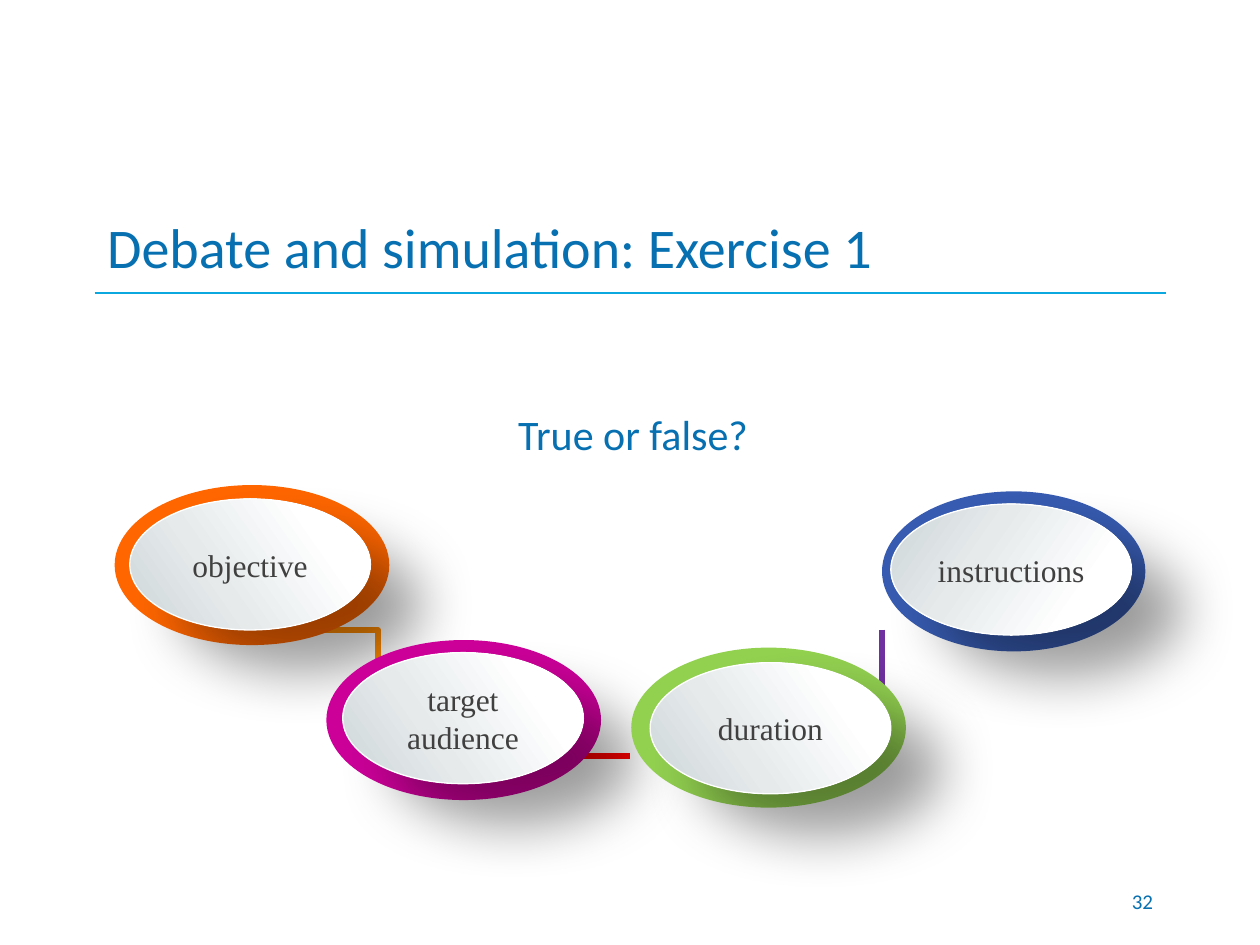
from dataclasses import dataclass
from lxml import etree
from pptx import Presentation
from pptx.dml.color import RGBColor
from pptx.enum.shapes import MSO_CONNECTOR as CONNECTOR, MSO_SHAPE as SHAPE
from pptx.enum.text import MSO_ANCHOR as ANCHOR, PP_ALIGN as ALIGN
from pptx.oxml import parse_xml
from pptx.oxml.ns import nsdecls, qn
from pptx.util import Inches, Pt

WIDTH, HEIGHT = 10, 7.5
MARGIN = 0.075 * WIDTH
CONTENT = WIDTH - 2 * MARGIN
BLUE = RGBColor(0x07, 0x70, 0xB1)
RULE = RGBColor(0x0B, 0xA7, 0xDF)
WHITE = RGBColor(0xFF, 0xFF, 0xFF)
GREY = RGBColor(0x40, 0x40, 0x40)
PURPLE = RGBColor(0x70, 0x30, 0xA0)
RED = RGBColor(0xFF, 0x00, 0x00)
AMBER = RGBColor(0xFF, 0x8A, 0x00)
INDIGO = RGBColor(0x37, 0x5B, 0xB0)
ORANGE = RGBColor(0xFF, 0x66, 0x00)
MAGENTA = RGBColor(0xCC, 0x00, 0x99)
GREEN = RGBColor(0x92, 0xD0, 0x50)
GLOSS = ((0, "CDD5D8"), (37, "E6EAEB"), (77, "FFFFFF"), (100, "FFFFFF"))
FACE_SIZE = (1.91, 1.04)


@dataclass
class Box:
    left: float
    top: float
    width: float
    height: float

    def emu(self):
        return [Inches(v) for v in (self.left, self.top, self.width, self.height)]


def write(shape, text, font, size, color, align, anchor=ANCHOR.MIDDLE):
    frame = shape.text_frame
    frame.word_wrap = True
    frame.vertical_anchor = anchor
    paragraph = frame.paragraphs[0]
    paragraph.alignment = align
    run = paragraph.add_run()
    run.text = text
    run.font.name = font
    run.font.size = Pt(size)
    run.font.color.rgb = color
    return paragraph


def add_header(slide, box, text):
    title = slide.shapes.title
    title.left, title.top, title.width, title.height = box.emu()
    write(title, text, "Calibri", 32, BLUE, ALIGN.LEFT)
    bottom = Inches(box.top + box.height)
    rule = slide.shapes.add_connector(
        CONNECTOR.STRAIGHT, Inches(box.left), bottom, Inches(box.left + box.width), bottom)
    rule.line.color.rgb = RULE
    rule.line.width = Pt(0.75)
    etree.SubElement(rule._element.spPr, qn("a:effectLst"))


def add_label(slide, box, text, size, align, anchor):
    label = slide.shapes.add_textbox(*box.emu())
    return write(label, text, "Calibri", size, BLUE, align, anchor)


def bezier(points, t):
    while len(points) > 1:
        points = [(a[0] + (b[0] - a[0]) * t, a[1] + (b[1] - a[1]) * t)
                  for a, b in zip(points, points[1:])]
    return points[0]


def add_arc(slide, controls, color, steps=12):
    points = [bezier(controls, i / steps) for i in range(steps + 1)]
    builder = slide.shapes.build_freeform(*points[0], scale=Inches(1))
    builder.add_line_segments(points[1:], close=False)
    arc = builder.convert_to_shape()
    arc.shadow.inherit = False
    arc.fill.background()
    arc.line.color.rgb = color
    arc.line.width = Pt(3)


def add_gloss(shape, angle):
    properties = shape._element.spPr
    stops = "".join(f'<a:gs pos="{pos * 1000}"><a:srgbClr val="{color}"/></a:gs>'
                    for pos, color in GLOSS)
    properties.find(qn("a:prstGeom")).addnext(parse_xml(
        f'<a:gradFill {nsdecls("a")} rotWithShape="1"><a:gsLst>{stops}</a:gsLst>'
        f'<a:lin ang="{angle * 60000}" scaled="0"/></a:gradFill>'))
    properties.find(qn("a:effectLst")).append(parse_xml(
        f'<a:outerShdw {nsdecls("a")} blurRad="{Pt(33)}" dist="{Pt(36.7)}" '
        f'dir="{39 * 60000}" algn="tl" rotWithShape="0"><a:srgbClr val="000000">'
        '<a:alpha val="38000"/></a:srgbClr></a:outerShdw>'))


def add_medallion(slide, box, inset, text, color, angle):
    ring = slide.shapes.add_shape(SHAPE.OVAL, *box.emu())
    ring.shadow.inherit = False
    ring.fill.solid()
    ring.fill.fore_color.rgb = color
    ring.line.fill.background()
    face_box = Box(box.left + inset[0], box.top + inset[1], *FACE_SIZE)
    face = slide.shapes.add_shape(SHAPE.OVAL, *face_box.emu())
    face.shadow.inherit = False
    face.line.color.rgb = WHITE
    face.line.width = Pt(0.75)
    add_gloss(face, angle)
    frame = face.text_frame
    frame.margin_left = frame.margin_right = frame.margin_top = frame.margin_bottom = 0
    write(face, text, "Times New Roman", 18, GREY, ALIGN.CENTER)


def add_chain(slide, box):
    def at(x, y):
        return box.left + x, box.top + y

    def arc(color, *points):
        add_arc(slide, [at(*point) for point in points], color)

    def medallion(x, y, width, inset, text, color, angle=325):
        add_medallion(slide, Box(*at(x, y), width, 1.27), inset, text, color, angle)

    arc(PURPLE, (6.3, 1.15), (6.14, 1.33), (5.97, 1.5), (5.77, 1.65))
    arc(PURPLE, (5.77, 1.64), (5.59, 1.76), (5.4, 1.86), (5.19, 1.94))
    medallion(6.09, 0.05, 2.09, (0.07, 0.1), "instructions", INDIGO, 35)
    arc(RED, (3.58, 2.03), (3.91, 2.06), (4.24, 2.06), (4.57, 2.01))
    arc(AMBER, (1.56, 1.09), (1.77, 1.29), (2.03, 1.47), (2.31, 1.65))
    medallion(0, 0, 2.18, (0.12, 0.11), "objective", ORANGE)
    medallion(1.68, 1.23, 2.18, (0.13, 0.1), "target audience", MAGENTA)
    medallion(4.1, 1.29, 2.18, (0.15, 0.12), "duration", GREEN)


def main():
    presentation = Presentation()
    presentation.slide_width = Inches(WIDTH)
    presentation.slide_height = Inches(HEIGHT)
    slide = presentation.slides.add_slide(presentation.slide_layouts[5])
    add_header(slide, Box(MARGIN, 0.21 * HEIGHT, CONTENT, 0.1 * HEIGHT),
               "Debate and simulation: Exercise 1")
    add_label(slide, Box(7.17, 6.95, 2.08, 0.4), "32", 12, ALIGN.RIGHT, ANCHOR.MIDDLE)
    add_chain(slide, Box(0.91, 3.85, 8.18, 2.56))
    question = add_label(slide, Box(2.59, 3.13, 4.87, 0.54), "True or false?", 24,
                         ALIGN.CENTER, ANCHOR.TOP)
    question.line_spacing = 1.15
    question.space_after = Pt(6)
    presentation.save("out.pptx")


if __name__ == "__main__":
    main()
